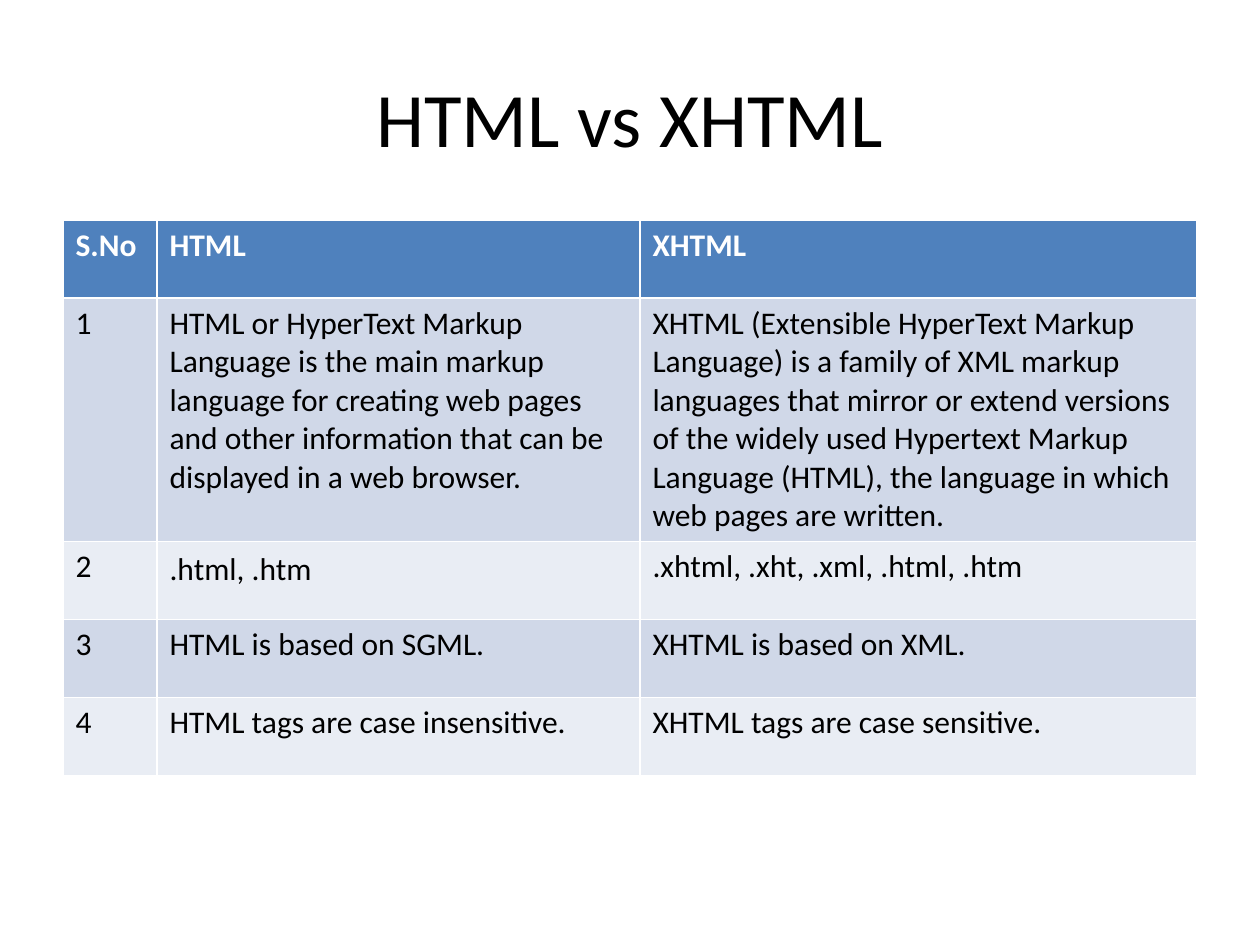
from pptx import Presentation
from pptx.dml.color import RGBColor
from pptx.enum.text import MSO_ANCHOR, PP_ALIGN
from pptx.util import Pt

EMU_PER_PX = 914400 // 126
FONT = "Calibri"
BLACK, WHITE = "000000", "FFFFFF"
HEADER_FILL = "4F81BD"
BAND_FILLS = ("D0D8E8", "E9EDF4")

TITLE = "HTML vs XHTML"
ROWS = [
    ("S.No", "HTML", "XHTML"),
    ("1",
     "HTML or HyperText Markup Language is the main markup language for "
     "creating web pages and other information that can be displayed in a "
     "web browser.",
     "XHTML (Extensible HyperText Markup Language) is a family of XML markup "
     "languages that mirror or extend versions of the widely used Hypertext "
     "Markup Language (HTML), the language in which web pages are written."),
    ("2", ".html, .htm", ".xhtml, .xht, .xml, .html, .htm"),
    ("3", "HTML is based on SGML.", "XHTML is based on XML."),
    ("4", "HTML tags are case insensitive.", "XHTML tags are case sensitive."),
]
COLUMN_WIDTHS = (94, 483, 557)
ROW_HEIGHTS = (78, 242, 78, 78, 78)
LEFT, TITLE_TOP, TITLE_HEIGHT, TABLE_TOP = 63, 38, 157, 220
EXTENSIONS_CELL = (2, 1)
EXTENSIONS_MARGIN = 9


def px(length):
    return length * EMU_PER_PX


def rgb(color):
    return RGBColor.from_string(color)


def format_text(text_frame, size, color, bold=False):
    for paragraph in text_frame.paragraphs:
        for run in paragraph.runs:
            run.font.name = FONT
            run.font.size = Pt(size)
            run.font.bold = bold
            run.font.color.rgb = rgb(color)


def add_title(slide, width):
    title = slide.shapes.title
    title.left, title.top = px(LEFT), px(TITLE_TOP)
    title.width, title.height = width, px(TITLE_HEIGHT)
    title.text_frame.text = TITLE
    title.text_frame.vertical_anchor = MSO_ANCHOR.MIDDLE
    title.text_frame.paragraphs[0].alignment = PP_ALIGN.CENTER
    format_text(title.text_frame, 44, BLACK)


def add_comparison(slide, width):
    comparison = slide.shapes.add_table(
        len(ROWS), len(COLUMN_WIDTHS), px(LEFT), px(TABLE_TOP),
        width, px(sum(ROW_HEIGHTS))).table
    for column, column_width in zip(comparison.columns, COLUMN_WIDTHS):
        column.width = px(column_width)
    for row, row_height in zip(comparison.rows, ROW_HEIGHTS):
        row.height = px(row_height)

    for r, entries in enumerate(ROWS):
        is_header = r == 0
        fill = HEADER_FILL if is_header else BAND_FILLS[(r - 1) % 2]
        for c, entry in enumerate(entries):
            cell = comparison.cell(r, c)
            cell.text_frame.text = entry
            cell.fill.solid()
            cell.fill.fore_color.rgb = rgb(fill)
            format_text(cell.text_frame, 18,
                        WHITE if is_header else BLACK, is_header)

    extensions = comparison.cell(*EXTENSIONS_CELL)
    extensions.margin_top = extensions.margin_bottom = px(EXTENSIONS_MARGIN)


def main():
    presentation = Presentation()
    presentation.slide_width, presentation.slide_height = px(1260), px(945)
    slide = presentation.slides.add_slide(presentation.slide_layouts[5])
    content_width = px(sum(COLUMN_WIDTHS))
    add_title(slide, content_width)
    add_comparison(slide, content_width)
    presentation.save("out.pptx")


if __name__ == "__main__":
    main()
